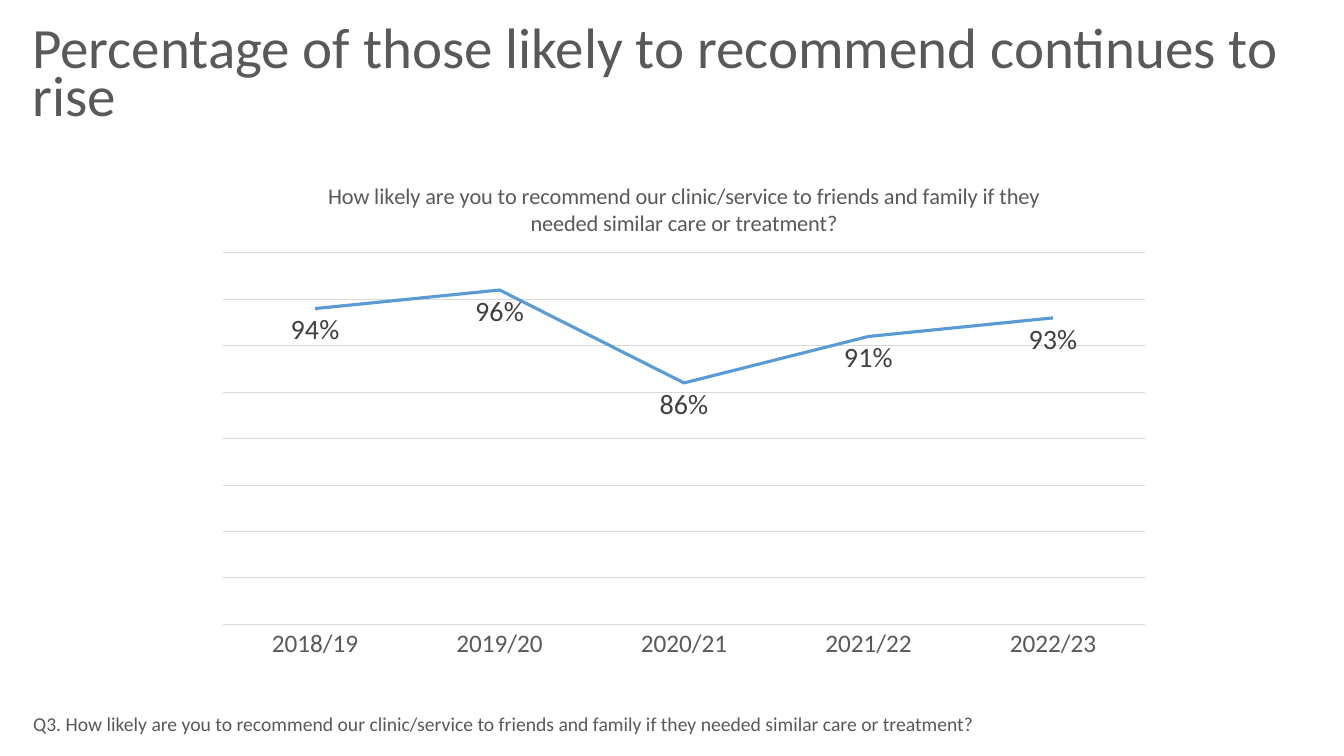
"""Build the slide on the share of patients likely to recommend the service."""
from pptx import Presentation
from pptx.chart.data import CategoryChartData
from pptx.dml.color import RGBColor
from pptx.enum.chart import XL_CHART_TYPE, XL_LABEL_POSITION, XL_TICK_MARK
from pptx.enum.text import MSO_ANCHOR, MSO_AUTO_SIZE, PP_ALIGN
from pptx.oxml import parse_xml
from pptx.oxml.ns import nsdecls
from pptx.util import Inches, Pt

GREY = RGBColor(0x59, 0x59, 0x59)
DARK = RGBColor(0x40, 0x40, 0x40)
PALE = RGBColor(0xD9, 0xD9, 0xD9)
BLUE = RGBColor(0x5B, 0x9B, 0xD5)
QUESTION = ("How likely are you to recommend our clinic/service to friends "
            "and family if they needed similar care or treatment?")
RESULTS = {"2018/19": 0.94, "2019/20": 0.96, "2020/21": 0.86,
           "2021/22": 0.91, "2022/23": 0.93}


def style_font(font, size, color):
    font.name = "Calibri"
    font.size = Pt(size)
    font.bold = False
    font.color.rgb = color


def style_line(line, width, color):
    line.color.rgb = color
    line.width = Pt(width)


prs = Presentation()
prs.slide_width = Inches(13.33)
prs.slide_height = Inches(7.5)
s = prs.slides.add_slide(prs.slide_layouts[5])

title = s.shapes.title
title.left, title.top = Inches(0.22), Inches(0.25)
title.width, title.height = Inches(12.63), Inches(1.19)
tf = title.text_frame
tf.text = "Percentage of those likely to recommend continues to rise"
tf.word_wrap = True
tf.auto_size = MSO_AUTO_SIZE.NONE
tf.vertical_anchor = MSO_ANCHOR.TOP
p = tf.paragraphs[0]
p.alignment = PP_ALIGN.LEFT
p.line_spacing = 0.7
style_font(p.runs[0].font, 40.7, GREY)

data = CategoryChartData(number_format="0%")
data.categories = list(RESULTS)
data.add_series("Series 1", list(RESULTS.values()))
chart = s.shapes.add_chart(XL_CHART_TYPE.LINE, Inches(2.02), Inches(1.6),
                           Inches(9.53), Inches(5.05), data).chart
style_font(chart.font, 10, RGBColor(0, 0, 0))
chart.has_legend = False
chart.has_title = True
tf = chart.chart_title.text_frame
tf.text = QUESTION
style_font(tf.paragraphs[0].runs[0].font, 16, GREY)
chart.chart_title.include_in_layout = False

years = chart.category_axis
years.major_tick_mark = XL_TICK_MARK.NONE
style_font(years.tick_labels.font, 18, GREY)
style_line(years.format.line, 0.75, PALE)

share = chart.value_axis
share.visible = False
share.minimum_scale, share.maximum_scale = 0.6, 1
share.major_unit = 0.05
share.has_major_gridlines = True
style_line(share.major_gridlines.format.line, 0.75, PALE)

plot = chart.plots[0]
plot.vary_by_categories = False
series = plot.series[0]
series.smooth = False
style_line(series.format.line, 2.25, BLUE)
labels = series.data_labels
labels.show_value = True
labels.position = XL_LABEL_POSITION.BELOW
labels.number_format = "0%"
labels.number_format_is_linked = False
style_font(labels.font, 20, DARK)

plot_area = chart.element.chart.plotArea
for layout in plot_area.findall("{*}layout"):
    plot_area.remove(layout)
plot_area.insert(0, parse_xml(
    f'<c:layout {nsdecls("c")}><c:manualLayout><c:layoutTarget val="inner"/>'
    '<c:xMode val="edge"/><c:yMode val="edge"/><c:x val="0.02"/>'
    '<c:y val="0.18"/><c:w val="0.96"/><c:h val="0.73"/>'
    '</c:manualLayout></c:layout>'))

note = s.shapes.add_textbox(Inches(0.23), Inches(7.01), Inches(10.5), Inches(0.34))
tf = note.text_frame
tf.text = f"Q3. {QUESTION}"
tf.word_wrap = True
tf.auto_size = MSO_AUTO_SIZE.SHAPE_TO_FIT_TEXT
style_font(tf.paragraphs[0].runs[0].font, 14, GREY)

prs.save("out.pptx")
